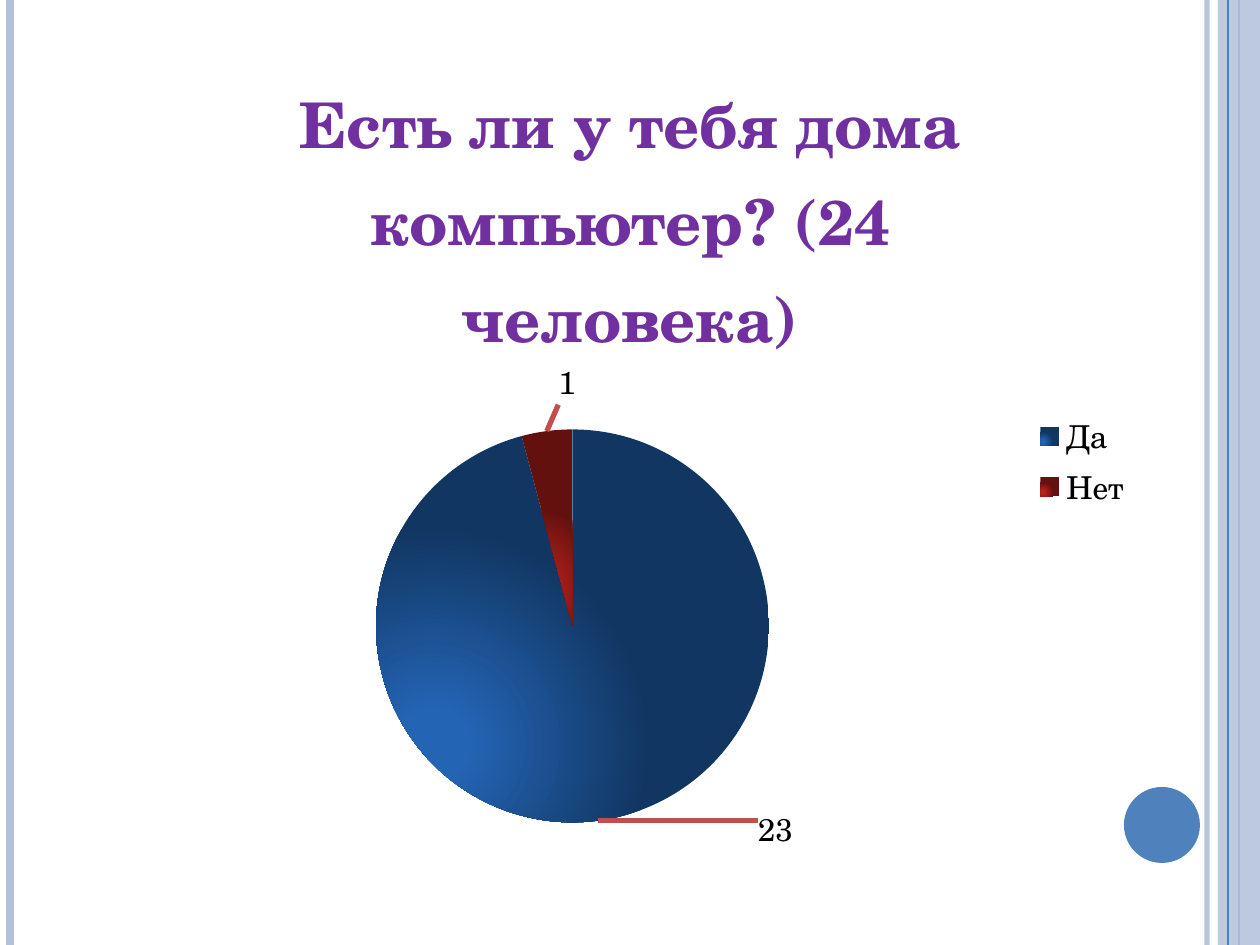
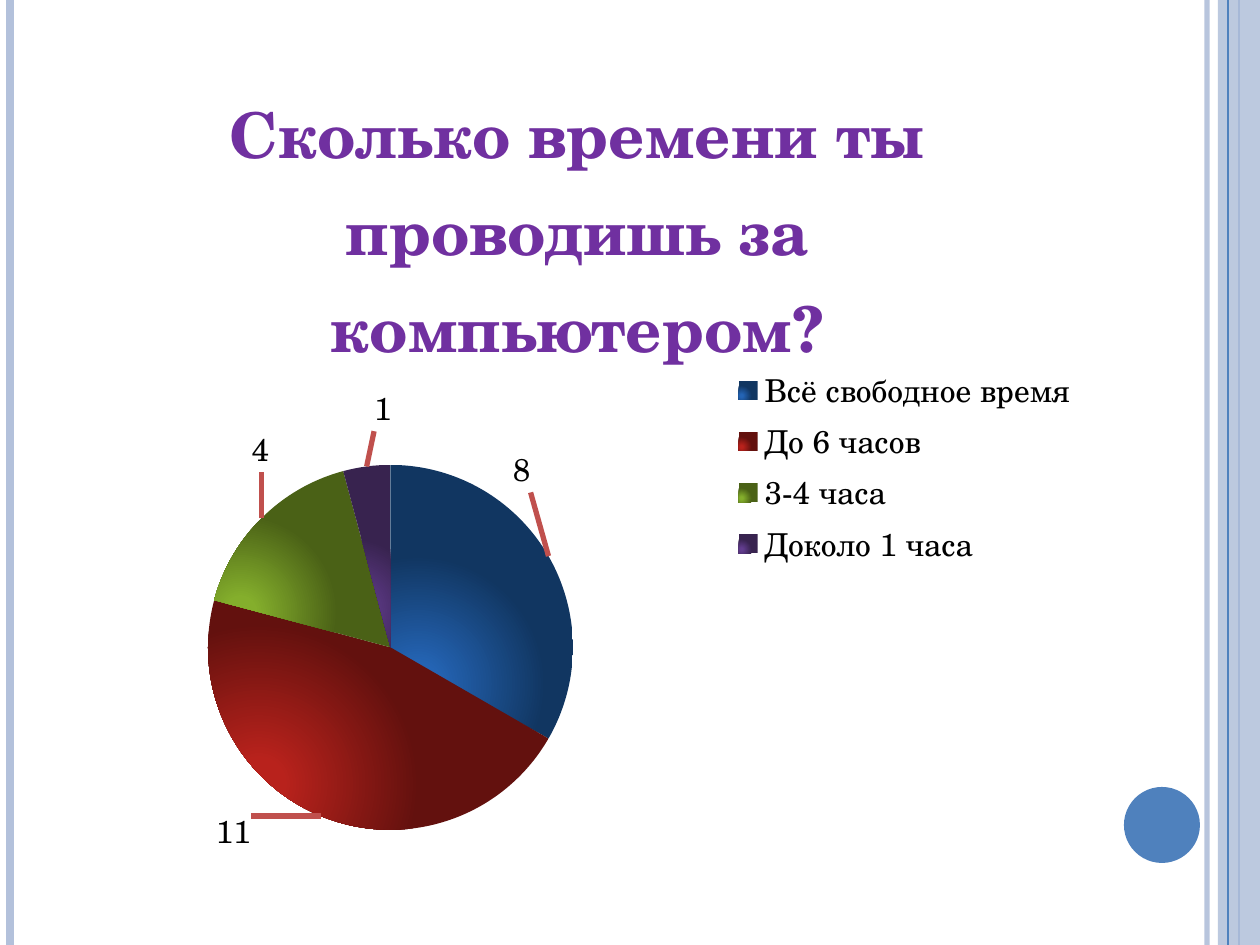
from lxml.etree import SubElement
from pptx import Presentation
from pptx.chart.data import CategoryChartData
from pptx.dml.color import RGBColor
from pptx.enum.chart import XL_CHART_TYPE, XL_LABEL_POSITION, XL_LEGEND_POSITION
from pptx.enum.shapes import MSO_CONNECTOR, MSO_SHAPE
from pptx.oxml import parse_xml
from pptx.oxml.ns import nsdecls, qn
from pptx.util import Emu, Pt

SCALE = 914400 / 126  # EMU in one px
WIDE, HIGH = 1260, 945
FONT = "TeX Gyre Schola"
HUES = {"band": "B3C1DB", "accent": "4F81BD", "title": "7030A0",
        "text": "000000", "leader": "C0504D"}
# Light centre and dark rim of each slice
SLICES = [("2464B4", "113661"), ("B8221C", "63110E"),
          ("84AE2C", "4A6116"), ("623D8E", "38234F")]
GLOW_STOPS = [(0, 0), (12, 0), (78, 1), (100, 1)]  # percent, light or dark
EDGE = '<c:xMode val="edge"/><c:yMode val="edge"/>'


def px(n):
    return Emu(round(n * SCALE))


def rgb(name):
    return RGBColor.from_string(HUES[name])


def style(font, size=18, color="text", bold=False):
    font.name, font.size, font.bold = FONT, Pt(size), bold
    font.color.rgb = rgb(color)


def write(frame, text, **form):
    run = frame.paragraphs[0].add_run()
    run.text = text
    style(run.font, **form)


def fade(props, alpha):
    """Set the opacity, in percent, of the first colour in the properties."""
    tone = props.find(".//" + qn("a:srgbClr"))
    SubElement(tone, qn("a:alpha")).set("val", str(alpha * 1000))


def glow(tones):
    """Radial fill with its light centre at the lower left."""
    stops = "".join(
        f'<a:gs pos="{share * 1000}"><a:srgbClr val="{tones[i]}"/></a:gs>'
        for share, i in GLOW_STOPS)
    return parse_xml(
        f'<a:gradFill {nsdecls("a")} rotWithShape="1"><a:gsLst>{stops}</a:gsLst>'
        '<a:path path="circle"><a:fillToRect l="15000" t="80000" r="85000" '
        'b="20000"/></a:path></a:gradFill>')


def place(node, index, modes, **parts):
    """Give a chart part a manual layout, in fractions of the chart."""
    for old in node.findall(qn("c:layout")):
        node.remove(old)
    sizes = "".join(f'<c:{key} val="{val:.4f}"/>' for key, val in parts.items())
    node.insert(index, parse_xml(
        f'<c:layout {nsdecls("c")}><c:manualLayout>{modes}{sizes}'
        '</c:manualLayout></c:layout>'))


def inside(box, frame):
    """Turn a slide box into fractions of the frame around it."""
    x, y, w, h = box
    left, top, wide, high = frame
    return {"x": (x - left) / wide, "y": (y - top) / high,
            "w": w / wide, "h": h / high}


class Deck:
    def __init__(self):
        self.show = Presentation()
        self.show.slide_width, self.show.slide_height = px(WIDE), px(HIGH)
        self.slide = None

    def page(self):
        """Start a slide with the side bands and the disc."""
        self.slide = self.show.slides.add_slide(self.show.slide_layouts[6])
        self.rule(1207, "band", 3, alpha=93)
        self.rule(10, "band", 4.5)
        self.rule(1239, "accent", 1.5)
        self.shape(MSO_SHAPE.RECTANGLE, (1218, 0, 42, HIGH), "band", alpha=87)
        self.rule(1228, "accent", 0.75)
        self.shape(MSO_SHAPE.OVAL, (1124, 787, 76, 76), "accent")

    def rule(self, x, color, width, alpha=100):
        """Draw an upright line over the full height."""
        rule = self.slide.shapes.add_connector(
            MSO_CONNECTOR.STRAIGHT, px(x), 0, px(x), px(HIGH))
        rule.line.color.rgb, rule.line.width = rgb(color), Pt(width)
        fade(rule.element.spPr, alpha)
        SubElement(rule.element.spPr, qn("a:effectLst"))

    def shape(self, kind, box, color, alpha=100):
        shape = self.slide.shapes.add_shape(kind, *map(px, box))
        shape.shadow.inherit = False
        shape.fill.solid()
        shape.fill.fore_color.rgb = rgb(color)
        shape.line.fill.background()
        fade(shape.element.spPr, alpha)

    def pie(self, box, title, name, rows, disc, key):
        """Draw a pie; each row is label, value and shift of its number."""
        labels, values, shifts = zip(*rows)
        data = CategoryChartData()
        data.categories = labels
        data.add_series(name, values)
        chart = self.slide.shapes.add_chart(
            XL_CHART_TYPE.PIE, *map(px, box), data).chart
        style(chart.font)
        self.head(chart, title)
        self.cut(chart, len(rows))
        self.lead(chart, box, shifts)

        # Places of the disc and the legend
        plot = chart.element.xpath(".//c:plotArea")[0]
        place(plot, 0, '<c:layoutTarget val="inner"/>' + EDGE, **inside(disc, box))
        legend = chart.element.xpath(".//c:legend")[0]
        place(legend, 1, EDGE, **inside(key, box))

    def head(self, chart, title):
        """Set the title and the legend."""
        chart.has_title = True
        write(chart.chart_title.text_frame, title,
              size=36, color="title", bold=True)
        chart.has_legend = True
        chart.legend.position = XL_LEGEND_POSITION.RIGHT
        chart.legend.include_in_layout = False
        style(chart.legend.font)

    def cut(self, chart, count):
        """Fill the slices and put a value outside each one."""
        plot = chart.plots[0]
        plot.vary_by_categories = True
        series = plot.series[0]
        series.data_labels.show_value = True
        style(series.data_labels.font)
        for i in range(count):
            point = series.points[i]
            point.format.line.fill.background()
            point.data_label.position = XL_LABEL_POSITION.OUTSIDE_END
        slices = chart.element.xpath(".//c:dPt/c:spPr")
        for props, tones in zip(slices, SLICES):
            props.insert(0, glow(tones))

    def lead(self, chart, box, shifts):
        """Move the values away and tie them to their slices."""
        wide, high = box[2:]
        for label, (dx, dy) in zip(chart.element.xpath(".//c:dLbl"), shifts):
            place(label, 1, "", x=dx / wide, y=dy / high)

        # Leader lines take the line of the series
        line = chart.plots[0].series[0].format.line
        line.color.rgb, line.width = rgb("leader"), Pt(3)
        group = chart.element.xpath(".//c:ser/c:dLbls")[0]
        flag = group.find(qn("c:showLeaderLines"))
        if flag is None:
            flag = SubElement(group, qn("c:showLeaderLines"))
        flag.set("val", "1")
        flag.addnext(parse_xml(
            f'<c:leaderLines {nsdecls("c", "a")}><c:spPr><a:ln w="{Pt(3)}">'
            f'<a:solidFill><a:srgbClr val="{HUES["leader"]}"/></a:solidFill>'
            '</a:ln></c:spPr></c:leaderLines>'))


def main():
    deck = Deck()

    # Computer at home
    deck.page()
    deck.pie((116, 32, 1029, 861),
             "Есть ли у тебя дома компьютер? (24 человека)", "Series 1",
             [("Да", 23, (159, -22)),
              ("Нет", 1, (30, -19))],
             disc=(376, 429, 393, 394), key=(1030, 409, 105, 105))

    # Hours at the computer
    deck.page()
    ask = "Сколько времени ты проводишь за компьютером?"
    deck.pie((63, 42, 1029, 850), ask, ask,
             [("Всё свободное время", 8, (-42, -60)),
              ("До 6 часов", 11, (-67, -15)),
              ("3-4 часа", 4, (13, -41)),
              ("Доколо 1 часа", 1, (26, -28))],
             disc=(208, 465, 365, 365), key=(730, 362, 350, 210))

    deck.show.save("out.pptx")


if __name__ == "__main__":
    main()
